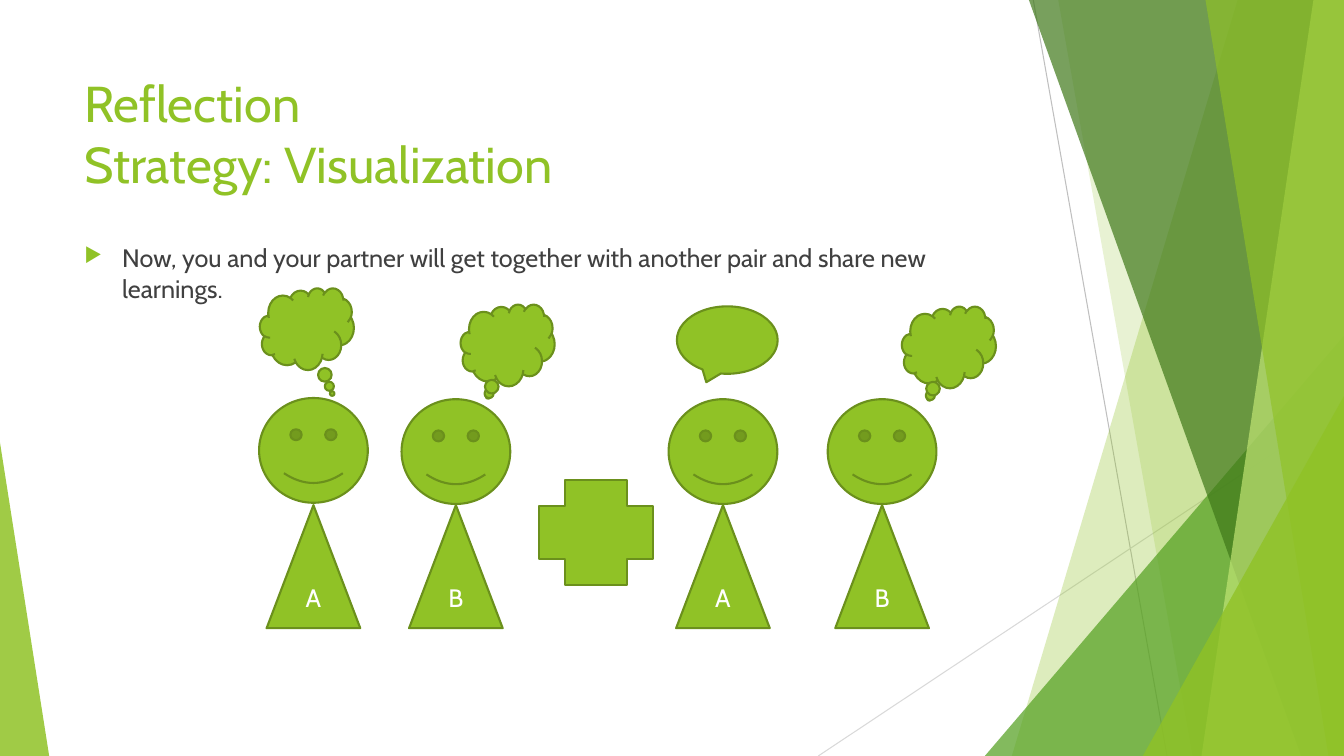
from dataclasses import dataclass

from lxml import etree
from pptx import Presentation
from pptx.dml.color import RGBColor
from pptx.enum.shapes import MSO_CONNECTOR, MSO_SHAPE
from pptx.enum.text import MSO_ANCHOR, PP_ALIGN
from pptx.oxml.ns import qn
from pptx.shapes.autoshape import Shape
from pptx.shapes.shapetree import SlideShapes
from pptx.text.text import TextFrame, _Paragraph
from pptx.util import Cm, Pt

STRAIGHT = MSO_CONNECTOR.STRAIGHT
TRIANGLE = MSO_SHAPE.ISOSCELES_TRIANGLE
SMILEY = MSO_SHAPE.SMILEY_FACE
PLUS = MSO_SHAPE.CROSS
SPEECH = MSO_SHAPE.OVAL_CALLOUT
THOUGHT = MSO_SHAPE.CLOUD_CALLOUT
TOP, MIDDLE = MSO_ANCHOR.TOP, MSO_ANCHOR.MIDDLE
CENTER = PP_ALIGN.CENTER

WIDTH, HEIGHT = 33.87, 19.05
HEAD_WIDTH, HEAD_HEIGHT = 2.74, 2.64
BODY_TOP, BODY_WIDTH, BODY_HEIGHT = 12.73, 2.36, 3.1


@dataclass(frozen=True)
class Theme:
    font: str = "Cabin"
    green: str = "90C226"
    outline: str = "6B901C"
    leaf: str = "54A021"
    forest: str = "3F7819"
    lime: str = "C0E474"
    ink: str = "404040"
    white: str = "FFFFFF"
    gray: str = "BFBFBF"
    pale_gray: str = "D9D9D9"
    title_size: float = 36
    text_size: float = 18


THEME = Theme()


@dataclass(frozen=True)
class Ray:
    start: tuple[float, float]
    end: tuple[float, float]
    color: str


@dataclass(frozen=True)
class Band:
    """A strip from its slanted left edge to the right edge of the slide."""
    top_x: float
    bottom_x: float
    color: str
    opacity: int


@dataclass(frozen=True)
class Corner:
    """A right triangle standing on the bottom edge of the slide."""
    left: float
    top: float
    width: float
    apex: float
    color: str
    opacity: int


@dataclass(frozen=True)
class Person:
    label: str
    center_x: float
    head_top: float


@dataclass(frozen=True)
class Symbol:
    kind: MSO_SHAPE
    left: float
    top: float
    width: float
    height: float
    tail: tuple[float, ...] = ()


RAYS = [
    Ray((26.04, 0), (29.41, HEIGHT), THEME.gray),
    Ray((WIDTH, 10.24), (20.62, HEIGHT), THEME.pale_gray),
]
BACKDROP = [
    Band(31.19, 25.5, THEME.green, 30),
    Band(26.67, 30.05, THEME.green, 20),
    Corner(24.82, 8.46, 9.05, 1, THEME.leaf, 72),
    Band(25.93, 32.79, THEME.forest, 70),
    Band(33.1, 30.28, THEME.lime, 70),
    Band(30.38, 33.48, THEME.green, 65),
    Corner(28.8, 9.98, 5.07, 1, THEME.green, 80),
    Corner(0, 11.15, 1.24, 0, THEME.green, 85),
]
PEOPLE = [
    Person("A", 7.9, 10.03),
    Person("B", 11.49, 10.06),
    Person("A", 18.22, 10.06),
    Person("B", 22.23, 10.06),
]
SYMBOLS = [
    Symbol(PLUS, 13.58, 12.09, 2.88, 2.66),
    Symbol(SPEECH, 17.06, 7.72, 2.54, 1.7),
    Symbol(THOUGHT, 22.73, 7.72, 2.37, 2.06),
    Symbol(THOUGHT, 6.55, 7.26, 2.37, 2.06, (0.269, 0.79)),
    Symbol(THOUGHT, 11.61, 7.67, 2.37, 2.06),
]


def draw_ray(shapes: SlideShapes, ray: Ray) -> None:
    line = shapes.add_connector(STRAIGHT, *map(Cm, ray.start + ray.end))
    line.line.color.rgb = RGBColor.from_string(ray.color)
    line.line.width = Pt(0.75)
    etree.SubElement(line._element.spPr, qn("a:effectLst"))


def fill_translucent(shape: Shape, color: str, opacity: int) -> None:
    shape.shadow.inherit = False
    shape.line.fill.background()
    shape.fill.solid()
    shape.fill.fore_color.rgb = RGBColor.from_string(color)
    tint = shape._element.spPr.find(qn("a:solidFill"))[0]
    etree.SubElement(tint, qn("a:alpha"), val=str(opacity * 1000))


def draw_band(shapes: SlideShapes, band: Band) -> None:
    outline = shapes.build_freeform(Cm(band.top_x), 0)
    edges = [(WIDTH, 0), (WIDTH, HEIGHT), (band.bottom_x, HEIGHT)]
    outline.add_line_segments([(Cm(x), Cm(y)) for x, y in edges])
    fill_translucent(outline.convert_to_shape(), band.color, band.opacity)


def draw_corner(shapes: SlideShapes, corner: Corner) -> None:
    shape = shapes.add_shape(TRIANGLE, Cm(corner.left), Cm(corner.top),
                             Cm(corner.width), Cm(HEIGHT - corner.top))
    shape.adjustments[0] = corner.apex
    fill_translucent(shape, corner.color, corner.opacity)


def draw_symbol(shapes: SlideShapes, symbol: Symbol) -> Shape:
    shape = shapes.add_shape(symbol.kind, Cm(symbol.left), Cm(symbol.top),
                             Cm(symbol.width), Cm(symbol.height))
    shape.shadow.inherit = False
    shape.fill.solid()
    shape.fill.fore_color.rgb = RGBColor.from_string(THEME.green)
    shape.line.color.rgb = RGBColor.from_string(THEME.outline)
    shape.line.width = Pt(1.5)
    for index, value in enumerate(symbol.tail):
        shape.adjustments[index] = value
    return shape


def add_run(paragraph: _Paragraph, text: str, size: float, color: str) -> None:
    run = paragraph.add_run()
    run.text = text
    run.font.name = THEME.font
    run.font.size = Pt(size)
    run.font.color.rgb = RGBColor.from_string(color)


def draw_person(shapes: SlideShapes, person: Person) -> None:
    draw_symbol(shapes, Symbol(SMILEY, person.center_x - HEAD_WIDTH / 2,
                               person.head_top, HEAD_WIDTH, HEAD_HEIGHT))
    body = draw_symbol(shapes, Symbol(TRIANGLE, person.center_x - BODY_WIDTH / 2,
                                      BODY_TOP, BODY_WIDTH, BODY_HEIGHT))
    body.text_frame.vertical_anchor = MIDDLE
    label = body.text_frame.paragraphs[0]
    label.alignment = CENTER
    add_run(label, person.label, THEME.text_size, THEME.white)


def add_text_area(shapes: SlideShapes, top: float, height: float) -> TextFrame:
    frame = shapes.add_textbox(Cm(1.88), Cm(top), Cm(23.88), Cm(height)).text_frame
    frame.word_wrap = True
    frame.vertical_anchor = TOP
    return frame


def add_bullet(paragraph: _Paragraph) -> None:
    paragraph.space_before = Pt(10)
    properties = paragraph._p.get_or_add_pPr()
    properties.set("marL", str(Cm(0.95)))
    properties.set("indent", str(Cm(-0.95)))
    color = etree.SubElement(properties, qn("a:buClr"))
    etree.SubElement(color, qn("a:srgbClr"), val=THEME.green)
    etree.SubElement(properties, qn("a:buSzPct"), val="80000")
    etree.SubElement(properties, qn("a:buChar"), char="▶")


def main() -> None:
    deck = Presentation()
    deck.slide_width, deck.slide_height = Cm(WIDTH), Cm(HEIGHT)
    shapes = deck.slides.add_slide(deck.slide_layouts[6]).shapes

    for ray in RAYS:
        draw_ray(shapes, ray)
    for part in BACKDROP:
        if isinstance(part, Band):
            draw_band(shapes, part)
        else:
            draw_corner(shapes, part)

    title = add_text_area(shapes, 1.7, 3.66).paragraphs[0]
    add_run(title, "Reflection", THEME.title_size, THEME.green)
    title.add_line_break()
    add_run(title, "Strategy: Visualization", THEME.title_size, THEME.green)

    instruction = add_text_area(shapes, 5.99, 10.77).paragraphs[0]
    add_bullet(instruction)
    add_run(instruction, "Now, you and your partner will get together with another "
            "pair and share new learnings.", THEME.text_size, THEME.ink)

    for person in PEOPLE:
        draw_person(shapes, person)
    for symbol in SYMBOLS:
        draw_symbol(shapes, symbol)
    deck.save("out.pptx")


if __name__ == "__main__":
    main()
